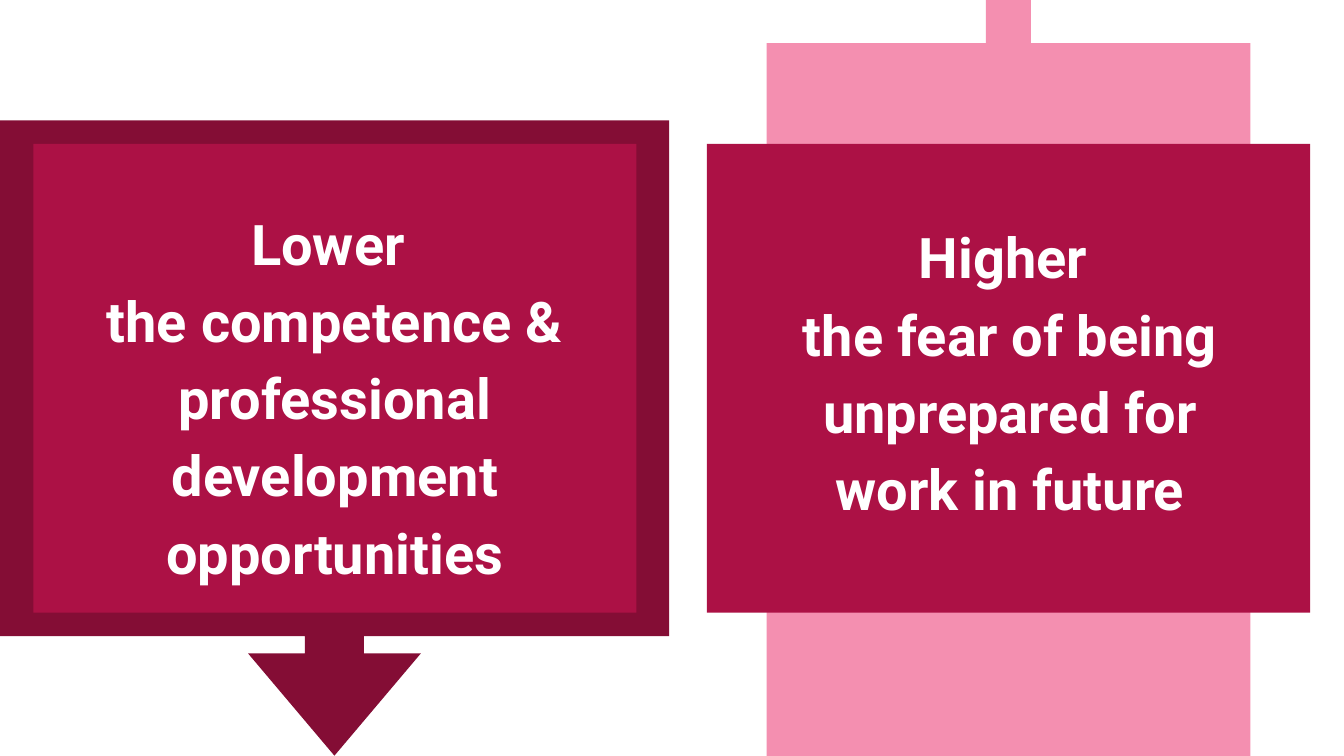
from pptx import Presentation
from pptx.dml.color import RGBColor
from pptx.enum.shapes import MSO_SHAPE as Preset
from pptx.enum.text import MSO_ANCHOR as Anchor, PP_ALIGN as Align
from pptx.util import Cm, Pt

WHITE = RGBColor(0xFF, 0xFF, 0xFF)
CRIMSON = RGBColor(0xAC, 0x11, 0x45)
MAROON = RGBColor(0x84, 0x0D, 0x35)
PINK = RGBColor(0xF4, 0x8F, 0xB0)

ARROW_PROPORTIONS = (0.093, 0.136, 0.161, 0.812)
PANEL_TOP, PANEL_WIDTH, PANEL_HEIGHT = 2.72, 11.4, 8.86
TEXT_TOP = 3.25


def write(paragraph, text, *, size=30, font="Roboto", color=WHITE, bold=True,
          align=Align.CENTER, spacing=1.15):
    paragraph.alignment = align
    paragraph.line_spacing = spacing
    run = paragraph.add_run()
    run.text = text
    run.font.size = Pt(size)
    run.font.name = font
    run.font.bold = bold
    run.font.color.rgb = color


class Board:
    """Draws on one slide; each card is a group of callout, panel and text."""

    def __init__(self, slide):
        self.slide = slide
        self.card = None

    def start_card(self):
        self.card = self.slide.shapes.add_group_shape().shapes

    def shape(self, preset, left, top, width, height, fill, adjustments):
        shape = self.card.add_shape(preset, Cm(left), Cm(top), Cm(width), Cm(height))
        for index, value in enumerate(adjustments):
            shape.adjustments[index] = value
        shape.shadow.inherit = False
        shape.fill.solid()
        shape.fill.fore_color.rgb = fill
        shape.line.fill.background()
        return shape

    def callout(self, center, length, breadth, rotation, fill):
        x, y = center
        arrow = self.shape(Preset.RIGHT_ARROW_CALLOUT, x - length / 2, y - breadth / 2,
                           length, breadth, fill, ARROW_PROPORTIONS)
        arrow.rotation = rotation

    def panel(self, left):
        self.shape(Preset.SNIP_1_RECTANGLE, left, PANEL_TOP, PANEL_WIDTH, PANEL_HEIGHT,
                   CRIMSON, (0,))

    def text(self, left, width, height, lines):
        box = self.card.add_textbox(Cm(left), Cm(TEXT_TOP), Cm(width), Cm(height))
        frame = box.text_frame
        frame.word_wrap = True
        frame.vertical_anchor = Anchor.MIDDLE
        frame.margin_left = frame.margin_right = Cm(0.25)
        frame.margin_top = frame.margin_bottom = Cm(0.25)
        for index, line in enumerate(lines):
            write(frame.add_paragraph() if index else frame.paragraphs[0], line)


def main():
    deck = Presentation()
    deck.slide_width, deck.slide_height = Cm(25.4), Cm(14.29)
    board = Board(deck.slides.add_slide(deck.slide_layouts[6]))

    # Rising fear, pointing up
    board.start_card()
    board.callout((19.06, 6.02), 16.69, 9.14, 270, PINK)
    board.panel(13.36)
    board.text(14.3, 9.58, 7.39,
               ("Higher ", "the fear of being unprepared for work in future"))

    # Falling competence, pointing down
    board.start_card()
    board.callout((6.32, 8.28), 12.01, 12.65, 90, MAROON)
    board.panel(0.63)
    board.text(0.63, PANEL_WIDTH, 8.33,
               ("Lower ", "the competence & professional development opportunities"))

    deck.save("out.pptx")


if __name__ == "__main__":
    main()
